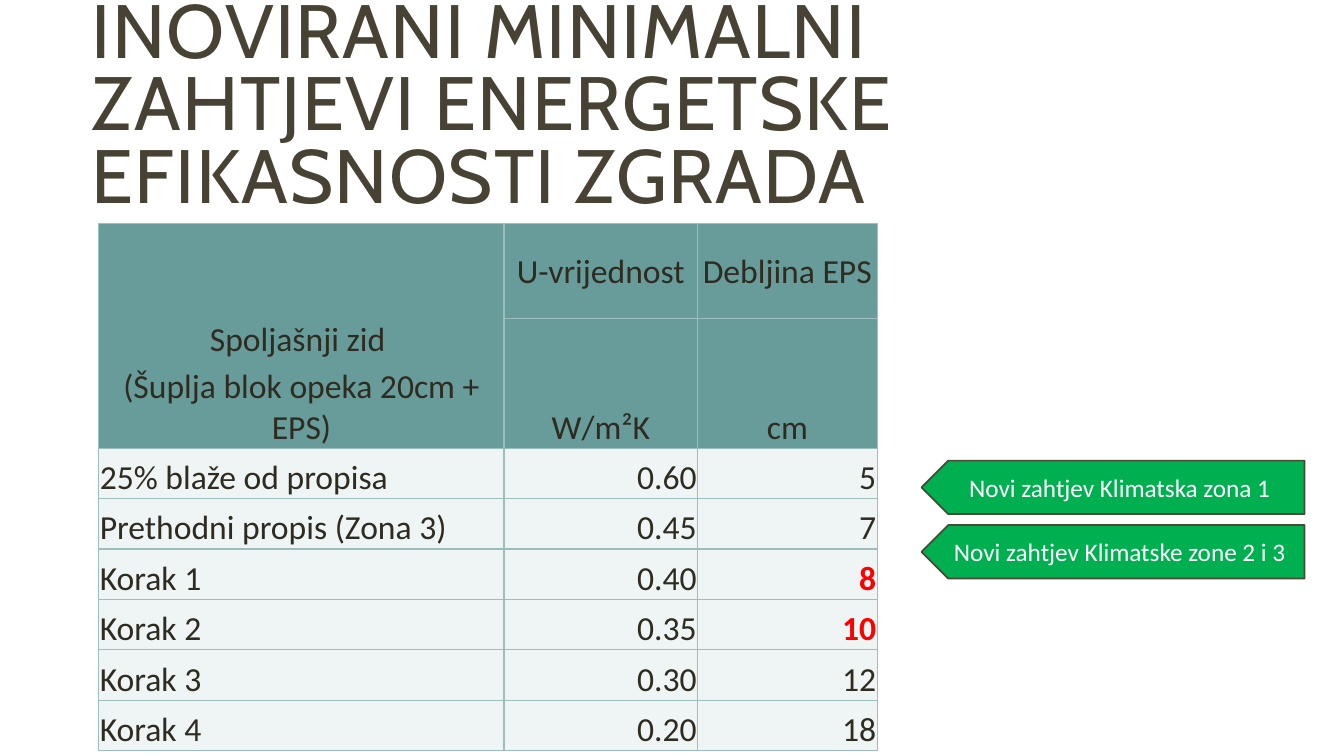
from dataclasses import dataclass

from pptx import Presentation
from pptx.dml.color import RGBColor
from pptx.enum import shapes, text
from pptx.oxml.ns import qn
from pptx.oxml.xmlchemy import OxmlElement
from pptx.util import Inches, Pt

TITLE_INK = "474233"
TABLE_INK = "2E2B21"
HEADER_FILL = "689C9A"
BODY_FILL = "EFF4F4"
BORDER = "9CBEBD"
ACCENT = "FF0000"
LEFT, CENTER, RIGHT = text.PP_ALIGN.LEFT, text.PP_ALIGN.CENTER, text.PP_ALIGN.RIGHT
MIDDLE, BOTTOM = text.MSO_ANCHOR.MIDDLE, text.MSO_ANCHOR.BOTTOM


@dataclass
class Step:
    name: str
    u_value: str
    thickness: str
    required: bool = False


@dataclass
class Header:
    row: int
    column: int
    lines: list[str]
    anchor: text.MSO_ANCHOR


HEADERS = [
    Header(0, 0, ["Spoljašnji zid ", "(Šuplja blok opeka 20cm + EPS)"], BOTTOM),
    Header(0, 1, ["U-vrijednost"], MIDDLE),
    Header(0, 2, ["Debljina EPS"], MIDDLE),
    Header(1, 1, ["W/m²K"], BOTTOM),
    Header(1, 2, ["cm"], BOTTOM),
]
STEPS = [
    Step("25% blaže od propisa", "0.60", "5"),
    Step("Prethodni propis (Zona 3)", "0.45", "7"),
    Step("Korak 1", "0.40", "8", required=True),
    Step("Korak 2", "0.35", "10", required=True),
    Step("Korak 3", "0.30", "12"),
    Step("Korak 4", "0.20", "18"),
]
COLUMN_WIDTHS = [4.02, 1.92, 1.78]
ROW_HEIGHTS = [0.94] + [0.5] * (len(STEPS) + 1)
CALLOUTS = ["Novi zahtjev Klimatska zona 1", "Novi zahtjev Klimatske zone 2 i 3"]


def rgb(value: str) -> RGBColor:
    return RGBColor.from_string(value)


def add_span(para, words: str, size: float, color: str, font="Calibri", bold=False):
    span = para.add_run()
    span.text = words
    span.font.name = font
    span.font.size = Pt(size)
    span.font.bold = bold
    span.font.color.rgb = rgb(color)
    return span


def add_title(page) -> None:
    title = page.shapes.title
    title.left, title.top = Inches(0.81), Inches(0.26)
    title.width, title.height = Inches(10.73), Inches(1.64)
    frame = title.text_frame
    frame.word_wrap = True
    frame.auto_size = text.MSO_AUTO_SIZE.NONE
    frame.vertical_anchor = MIDDLE
    para = frame.paragraphs[0]
    para.alignment = LEFT
    para.line_spacing = 0.8
    span = add_span(para, "INOVIRANI MINIMALNI ZAHTJEVI ENERGETSKE EFIKASNOSTI ZGRADA",
                    54, TITLE_INK, font="Cabin")
    span.font._element.set("spc", "100")


def set_borders(cell) -> None:
    properties = cell._tc.get_or_add_tcPr()
    for side in ("a:lnL", "a:lnR", "a:lnT", "a:lnB"):
        line = OxmlElement(side)
        line.set("w", str(Pt(1)))
        fill = OxmlElement("a:solidFill")
        color = OxmlElement("a:srgbClr")
        color.set("val", BORDER)
        fill.append(color)
        line.append(fill)
        properties.append(line)


def fill_cell(cell, lines: list[str], fill: str, align, anchor=BOTTOM,
              color: str = TABLE_INK, bold: bool = False) -> None:
    cell.margin_left = cell.margin_right = cell.margin_top = Inches(0.01)
    cell.margin_bottom = 0
    cell.vertical_anchor = anchor
    cell.fill.solid()
    cell.fill.fore_color.rgb = rgb(fill)
    frame = cell.text_frame
    for index, words in enumerate(lines):
        para = frame.add_paragraph() if index else frame.paragraphs[0]
        para.alignment = align
        para.space_before = para.space_after = Pt(2)
        add_span(para, words, 24, color, bold=bold)


def add_requirements_table(page) -> None:
    table = page.shapes.add_table(
        len(ROW_HEIGHTS), len(COLUMN_WIDTHS), Inches(0.98), Inches(2.22),
        Inches(sum(COLUMN_WIDTHS)), Inches(sum(ROW_HEIGHTS))).table
    table.horz_banding = False
    for column, width in zip(table.columns, COLUMN_WIDTHS):
        column.width = Inches(width)
    for row, height in zip(table.rows, ROW_HEIGHTS):
        row.height = Inches(height)
    for cell in table.iter_cells():
        set_borders(cell)

    table.cell(0, 0).merge(table.cell(1, 0))
    for header in HEADERS:
        fill_cell(table.cell(header.row, header.column), header.lines,
                  HEADER_FILL, CENTER, header.anchor)
    for row, step in enumerate(STEPS, start=2):
        fill_cell(table.cell(row, 0), [step.name], BODY_FILL, LEFT)
        fill_cell(table.cell(row, 1), [step.u_value], BODY_FILL, RIGHT)
        fill_cell(table.cell(row, 2), [step.thickness], BODY_FILL, RIGHT,
                  color=ACCENT if step.required else TABLE_INK, bold=step.required)


def add_callout(page, words: str, top: float) -> None:
    """Add a pentagon that points left, towards the table."""
    arrow = page.shapes.add_shape(shapes.MSO_SHAPE.PENTAGON, Inches(9.14), Inches(top),
                                  Inches(3.8), Inches(0.53))
    arrow._element.spPr.find(qn("a:xfrm")).set("flipH", "1")
    arrow.shadow.inherit = False
    arrow.fill.solid()
    arrow.fill.fore_color.rgb = rgb("00B050")
    arrow.line.color.rgb = rgb("4A4836")
    arrow.line.width = Pt(1.25)
    frame = arrow.text_frame
    frame.word_wrap = True
    frame.vertical_anchor = MIDDLE
    para = frame.paragraphs[0]
    para.alignment = CENTER
    add_span(para, words, 18, "FFFFFF")


def main() -> None:
    deck = Presentation()
    deck.slide_width, deck.slide_height = Inches(13.33), Inches(7.5)
    page = deck.slides.add_slide(deck.slide_layouts.get_by_name("Title Only"))
    add_title(page)
    add_requirements_table(page)
    for index, words in enumerate(CALLOUTS):
        add_callout(page, words, 4.57 + 0.64 * index)
    deck.save("out.pptx")


if __name__ == "__main__":
    main()
